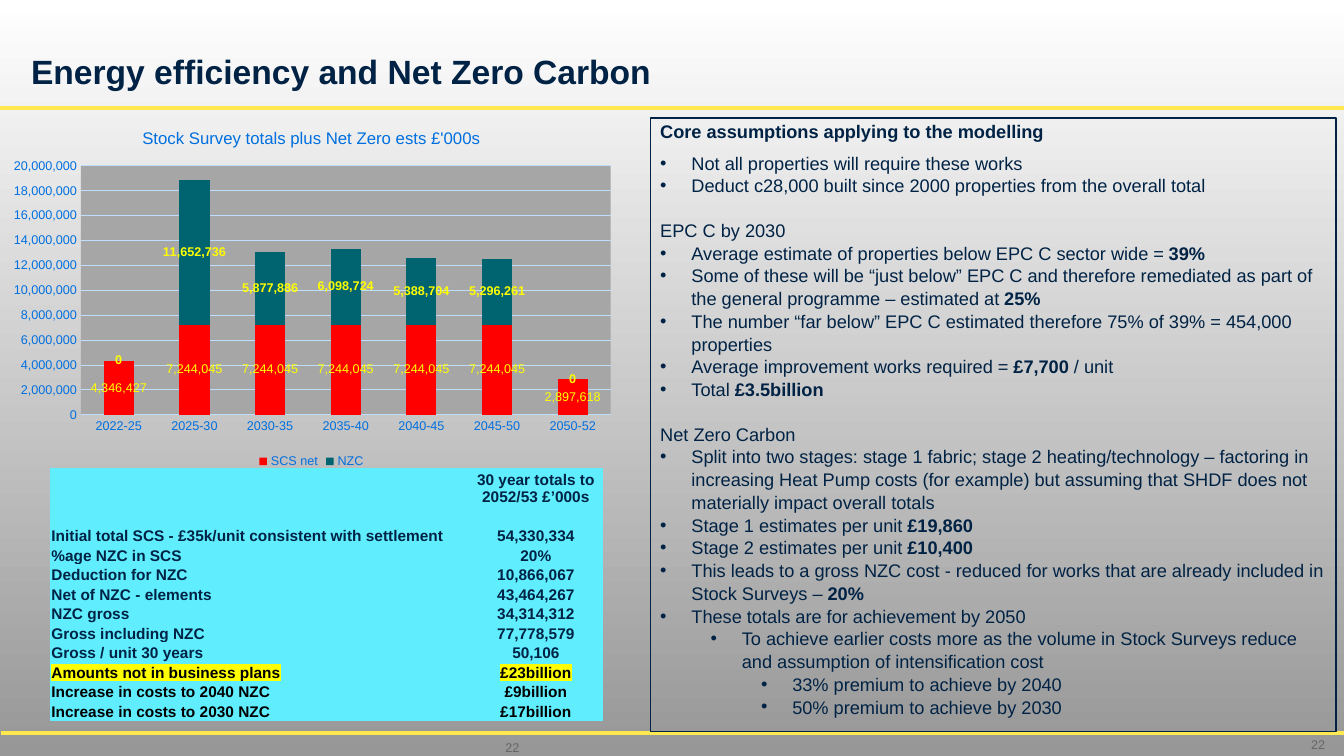
"""Build the slide on energy efficiency and Net Zero Carbon costs."""
from lxml import etree
from pptx import Presentation
from pptx.chart.data import CategoryChartData
from pptx.dml.color import RGBColor
from pptx.enum.chart import XL_CHART_TYPE, XL_LABEL_POSITION, XL_LEGEND_POSITION, XL_TICK_MARK
from pptx.enum.shapes import MSO_CONNECTOR, MSO_SHAPE
from pptx.enum.text import MSO_ANCHOR, PP_ALIGN
from pptx.oxml import parse_xml
from pptx.oxml.ns import nsdecls, qn
from pptx.util import Inches, Pt

STACKED = XL_CHART_TYPE.COLUMN_STACKED
CENTRED_LABEL = XL_LABEL_POSITION.CENTER
LEGEND_BOTTOM = XL_LEGEND_POSITION.BOTTOM
NO_TICK = XL_TICK_MARK.NONE
STRAIGHT = MSO_CONNECTOR.STRAIGHT
RECTANGLE = MSO_SHAPE.RECTANGLE
TOP, MIDDLE, BOTTOM = MSO_ANCHOR.TOP, MSO_ANCHOR.MIDDLE, MSO_ANCHOR.BOTTOM
LEFT, CENTER, RIGHT = PP_ALIGN.LEFT, PP_ALIGN.CENTER, PP_ALIGN.RIGHT

FONT = "Arial"
COLORS = {
    "navy": "002244", "blue": "006FDF", "pale": "BDDEFF", "gold": "FFE850",
    "grey": "666666", "plot": "A6A6A6", "red": "FF0000", "teal": "006470",
    "yellow": "FFFF00", "cyan": "60EEFF", "black": "000000",
    "sky": "FFFFFF", "ground": "979797",
}
NO_STYLE = "{2D5ABB26-0587-4C30-8999-92F81FD0307C}"

PERIODS = ["2022-25", "2025-30", "2030-35", "2035-40", "2040-45", "2045-50", "2050-52"]
COSTS = [
    ("SCS net", "red", False, [4346427] + [7244045] * 5 + [2897618]),
    ("NZC", "teal", True, [0, 11652736, 5877886, 6098724, 5388704, 5296261, 0]),
]
TOTALS = [
    ("", "30 year totals to 2052/53 £’000s"),
    ("", ""),
    ("Initial total SCS - £35k/unit consistent with settlement", "54,330,334"),
    ("%age NZC in SCS", "20%"),
    ("Deduction for NZC", "10,866,067"),
    ("Net of NZC - elements", "43,464,267"),
    ("NZC gross", "34,314,312"),
    ("Gross including NZC", "77,778,579"),
    ("Gross / unit 30 years", "50,106"),
    ("Amounts not in business plans", "£23billion"),
    ("Increase in costs to 2040 NZC", "£9billion"),
    ("Increase in costs to 2030 NZC", "£17billion"),
]
HIGHLIGHTED = 9
HEADING = None
ASSUMPTIONS = [
    (0, "Not all properties will require these works"),
    (0, "Deduct c28,000 built since 2000 properties from the overall total"),
    (HEADING, "EPC C by 2030"),
    (0, "Average estimate of properties below EPC C sector wide = *39%*"),
    (0, "Some of these will be “just below” EPC C and therefore remediated as part of "
        "the general programme – estimated at *25%*"),
    (0, "The number “far below” EPC C estimated therefore 75% of 39% = 454,000 properties"),
    (0, "Average improvement works required = *£7,700 */ unit"),
    (0, "Total *£3.5billion*"),
    (HEADING, "Net Zero Carbon"),
    (0, "Split into two stages: stage 1 fabric; stage 2 heating/technology – factoring in "
        "increasing Heat Pump costs (for example) but assuming that SHDF does not "
        "materially impact overall totals"),
    (0, "Stage 1 estimates per unit *£19,860*"),
    (0, "Stage 2 estimates per unit *£10,400*"),
    (0, "This leads to a gross NZC cost - reduced for works that are already included in "
        "Stock Surveys – *20%*"),
    (0, "These totals are for achievement by 2050"),
    (1, "To achieve earlier costs more as the volume in Stock Surveys reduce and "
        "assumption of intensification cost"),
    (2, "33% premium to achieve by 2040"),
    (2, "50% premium to achieve by 2030"),
]


def rgb(name):
    return RGBColor.from_string(COLORS[name])


class Deck:
    def __init__(self):
        self.prs = Presentation()
        self.prs.slide_width, self.prs.slide_height = Inches(13.33), Inches(7.5)
        self.slide = self.prs.slides.add_slide(self.prs.slide_layouts[6])
        self.shapes = self.slide.shapes

    def style(self, font, size, color, bold=False):
        font.size, font.bold, font.name = Pt(size), bold, FONT
        font.color.rgb = rgb(color)

    def background(self, start, end):
        fill = self.slide.background.fill
        fill.gradient()
        fill.gradient_angle = 270
        for stop, position, color in zip(fill.gradient_stops, (0, 1), (start, end)):
            stop.position, stop.color.rgb = position, rgb(color)

    def rule(self, left, y):
        line = self.shapes.add_connector(STRAIGHT, Inches(left), Inches(y), Inches(13.33), Inches(y))
        line.line.color.rgb, line.line.width = rgb("gold"), Pt(3)
        etree.SubElement(line.element.spPr, qn("a:effectLst"))

    def run(self, paragraph, text, size, color, bold=False):
        run = paragraph.add_run()
        run.text = text
        self.style(run.font, size, color, bold)
        return run

    def text(self, box, text, size, color, bold=False, align=LEFT, anchor=MIDDLE):
        frame = self.shapes.add_textbox(*map(Inches, box)).text_frame
        frame.word_wrap, frame.vertical_anchor = True, anchor
        frame.paragraphs[0].alignment = align
        self.run(frame.paragraphs[0], text, size, color, bold)

    def assumptions(self, box, title, items):
        panel = self.shapes.add_shape(RECTANGLE, *map(Inches, box))
        panel.shadow.inherit = False
        panel.fill.background()
        panel.line.color.rgb, panel.line.width = rgb("navy"), Pt(1)
        frame = panel.text_frame
        frame.word_wrap, frame.vertical_anchor = True, TOP
        heading = frame.paragraphs[0]
        heading.alignment, heading.line_spacing, heading.space_after = LEFT, 0.9, Pt(6)
        self.run(heading, title, 13, "navy", True)
        for level, text in items:
            paragraph = frame.add_paragraph()
            paragraph.alignment, paragraph.line_spacing = LEFT, 1.04
            if level is HEADING:
                paragraph.space_before = Pt(15.6)
            else:
                self.bullet(paragraph, level)
            for index, part in enumerate(text.split("*")):
                if part:
                    self.run(paragraph, part, 13, "navy", index % 2 == 1)

    def bullet(self, paragraph, level):
        paragraph.level = level
        properties = paragraph._p.get_or_add_pPr()
        properties.set("marL", str(Inches(0.31 + 0.5 * level)))
        properties.set("indent", str(Inches(-0.31)))
        etree.SubElement(properties, qn("a:buFont"), typeface=FONT)
        etree.SubElement(properties, qn("a:buChar"), char="•")

    def chart(self, box, title, periods, costs):
        data = CategoryChartData(number_format="#,##0")
        data.categories = periods
        for name, _, _, values in costs:
            data.add_series(name, values)
        chart = self.shapes.add_chart(STACKED, *map(Inches, box), data).chart
        self.style(chart.font, 10, "navy")
        chart.has_title = True
        self.run(chart.chart_title.text_frame.paragraphs[0], title, 12, "blue")
        chart.has_legend = True
        chart.legend.position, chart.legend.include_in_layout = LEGEND_BOTTOM, False
        self.style(chart.legend.font, 9, "blue")
        for axis in (chart.category_axis, chart.value_axis):
            axis.major_tick_mark = axis.minor_tick_mark = NO_TICK
            self.style(axis.tick_labels.font, 9, "blue")
        amounts = chart.value_axis
        amounts.minimum_scale, amounts.maximum_scale, amounts.major_unit = 0, 20000000, 2000000
        amounts.tick_labels.number_format = "#,##0"
        amounts.tick_labels.number_format_is_linked = False
        amounts.format.line.fill.background()
        for line in (amounts.major_gridlines.format.line, chart.category_axis.format.line):
            line.color.rgb, line.width = rgb("pale"), Pt(0.75)
        plot = chart.plots[0]
        plot.gap_width, plot.overlap, plot.vary_by_categories = 150, 100, False
        for series, (_, color, bold, _) in zip(plot.series, costs):
            series.format.fill.solid()
            series.format.fill.fore_color.rgb = rgb(color)
            labels = series.data_labels
            labels.show_value, labels.position = True, CENTRED_LABEL
            labels.number_format, labels.number_format_is_linked = "#,##0", False
            self.style(labels.font, 9, "yellow", bold)
        self.plot_area(chart, {"x": 0.13, "y": 0.15, "w": 0.85, "h": 0.69})

    def plot_area(self, chart, place):
        area = chart.element.find(".//" + qn("c:plotArea"))
        for layout in area.findall(qn("c:layout")):
            area.remove(layout)
        sizes = "".join(f'<c:{key} val="{value}"/>' for key, value in place.items())
        area.insert(0, parse_xml(
            f'<c:layout {nsdecls("c")}><c:manualLayout><c:layoutTarget val="inner"/>'
            f'<c:xMode val="edge"/><c:yMode val="edge"/>{sizes}</c:manualLayout></c:layout>'))
        area.append(parse_xml(
            f'<c:spPr {nsdecls("c", "a")}><a:solidFill><a:srgbClr val="{COLORS["plot"]}"/>'
            '</a:solidFill></c:spPr>'))

    def totals(self, box, widths, rows):
        frame = self.shapes.add_table(len(rows), len(widths), *map(Inches, box))
        table = frame.table
        table.first_row = table.horz_banding = False
        frame.element.find(".//" + qn("a:tableStyleId")).text = NO_STYLE
        for column, width in zip(table.columns, widths):
            column.width = Inches(width)
        for index, row in enumerate(rows):
            table.rows[index].height = Inches(0.18 if index else 0.36)
            for column, text in enumerate(row):
                self.total_cell(table.cell(index, column), text, index, CENTER if column else LEFT)

    def total_cell(self, cell, text, index, align):
        cell.fill.solid()
        cell.fill.fore_color.rgb = rgb("cyan")
        cell.margin_left = cell.margin_right = cell.margin_top = Inches(0.01)
        cell.margin_bottom, cell.vertical_anchor = 0, BOTTOM
        paragraph = cell.text_frame.paragraphs[0]
        paragraph.alignment = align
        if not text:
            etree.SubElement(paragraph._p, qn("a:endParaRPr"), sz="1100")
            return
        run = self.run(paragraph, text, 11, "black" if index >= HIGHLIGHTED else "navy", True)
        if index == HIGHLIGHTED:
            run.font._element.find(qn("a:solidFill")).addnext(parse_xml(
                f'<a:highlight {nsdecls("a")}><a:srgbClr val="{COLORS["yellow"]}"/></a:highlight>'))


def main():
    deck = Deck()
    deck.background("sky", "ground")
    deck.rule(0, 1.07)
    deck.rule(0.01, 7.27)
    deck.text((0.21, 0.45, 12.24, 0.5), "Energy efficiency and Net Zero Carbon", 24, "navy", True, anchor=BOTTOM)
    for left, top in ((12.73, 7.27), (4.74, 7.3)):
        deck.text((left, top, 0.51, 0.23), "22", 9, "grey", align=RIGHT)
    deck.assumptions((6.45, 1.17, 6.8, 6.09), "Core assumptions applying to the modelling", ASSUMPTIONS)
    deck.chart((0, 1.11, 6.18, 3.58), "Stock Survey totals plus Net Zero ests £'000s", PERIODS, COSTS)
    deck.totals((0.5, 4.64, 5.48, 2.34), (4.15, 1.33), TOTALS)
    deck.prs.save("out.pptx")


if __name__ == "__main__":
    main()
